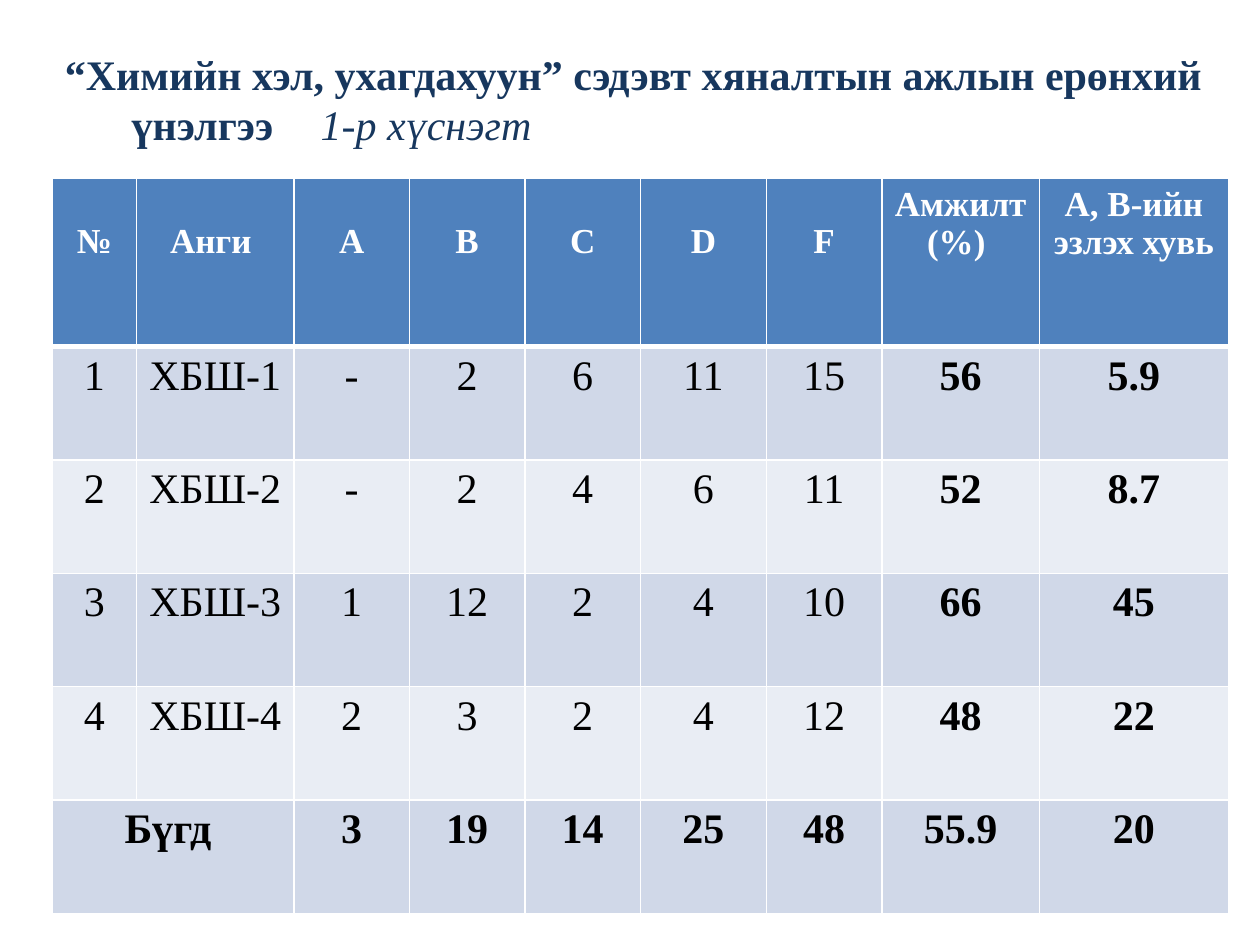
from dataclasses import dataclass

from lxml.etree import SubElement
from pptx import Presentation
from pptx.dml.color import RGBColor as Rgb
from pptx.enum.text import PP_ALIGN as Align
from pptx.oxml import parse_xml
from pptx.oxml.ns import nsdecls, qn
from pptx.util import Inches, Pt

# Content
TITLE = "“Химийн хэл, ухагдахуун” сэдэвт хяналтын ажлын ерөнхий үнэлгээ"
TABLE_LABEL = "1-р хүснэгт"
HEADERS = ["№", "Анги ", "А", "B", "C", "D", "F", "Амжилт (%) ", "А, В-ийн эзлэх хувь"]
CLASSES = [
    ["1", "ХБШ-1", "-", "2", "6", "11", "15", "56", "5.9"],
    ["2", "ХБШ-2", "-", "2", "4", "6", "11", "52", "8.7"],
    ["3", "ХБШ-3", "1", "12", "2", "4", "10", "66", "45"],
    ["4", "ХБШ-4", "2", "3", "2", "4", "12", "48", "22"],
]
TOTALS = ["Бүгд ", "", "3", "19", "14", "25", "48", "55.9", "20"]


@dataclass(frozen=True)
class Theme:
    font: str = "Times New Roman"
    title: str = "17375E"
    header: str = "4F81BD"
    bands: tuple = ("D0D8E8", "E9EDF4")
    light: str = "FFFFFF"
    dark: str = "000000"
    header_size: int = 20
    body_size: int = 24
    rule: int = 1
    heavy_rule: int = 3


THEME = Theme()

# Grid, in twelfths of an inch
UNIT = Inches(1) / 12
COLUMNS = [8, 15, 11, 11, 11, 12, 11, 15, 18]
HEADER_ROW, BODY_ROW = 16, 10.8
LEFT, TITLE_TOP, TITLE_HEIGHT, TABLE_TOP = 5, 4, 11, 17
BOLD_FROM = 7  # first of the two percentage columns
HANGING = Inches(0.53)
LABEL_TAB = Inches(6.92)


def units(count):
    return round(count * UNIT)


def add_span(para, text, size, color, bold=False, italic=False):
    span = para.add_run()
    span.text = text
    font = span.font
    font.name, font.size = THEME.font, Pt(size)
    font.bold, font.italic = bold, italic
    font.color.rgb = Rgb.from_string(color)


def set_borders(cell, **widths):
    props = cell._tc.get_or_add_tcPr()
    for index, side in enumerate("LRTB"):
        width = Pt(widths.get(side, THEME.rule))
        props.insert(index, parse_xml(
            f'<a:ln{side} {nsdecls("a")} w="{width}"><a:solidFill>'
            f'<a:srgbClr val="{THEME.light}"/></a:solidFill></a:ln{side}>'))


def fill_cell(cell, text, fill, size, color, bold):
    cell.fill.solid()
    cell.fill.fore_color.rgb = Rgb.from_string(fill)
    para = cell.text_frame.paragraphs[0]
    para.alignment = Align.CENTER
    if text:
        add_span(para, text, size, color, bold)


def add_title(page):
    box = page.shapes.add_textbox(units(LEFT), units(TITLE_TOP),
                                  units(sum(COLUMNS)), units(TITLE_HEIGHT))
    box.text_frame.word_wrap = True
    para = box.text_frame.paragraphs[0]
    para.space_before = Pt(0.2 * THEME.body_size)
    # Hanging indent, with a tab stop for the table label
    props = para._p.get_or_add_pPr()
    props.set("marL", str(HANGING))
    props.set("indent", str(-HANGING))
    stops = SubElement(props, qn("a:tabLst"))
    SubElement(stops, qn("a:tab"), pos=str(LABEL_TAB), algn="l")
    add_span(para, TITLE + "\t", THEME.body_size, THEME.title, bold=True)
    add_span(para, TABLE_LABEL, THEME.body_size, THEME.title, italic=True)


def add_grades(page):
    body = CLASSES + [TOTALS]
    heights = [HEADER_ROW] + [BODY_ROW] * len(body)
    table = page.shapes.add_table(
        len(heights), len(COLUMNS), units(LEFT), units(TABLE_TOP),
        units(sum(COLUMNS)), units(sum(heights))).table
    for column, width in zip(table.columns, COLUMNS):
        column.width = units(width)
    for row, height in zip(table.rows, heights):
        row.height = units(height)

    # Header: short names sit one line lower
    for col, text in enumerate(HEADERS):
        cell = table.cell(0, col)
        fill_cell(cell, text, THEME.header, THEME.header_size, THEME.light, True)
        set_borders(cell, B=THEME.heavy_rule)
        if col < BOLD_FROM:
            cell.margin_top = Inches(0.35)

    # Classes and totals
    for row, values in enumerate(body, 1):
        band = THEME.bands[(row - 1) % 2]
        for col, text in enumerate(values):
            cell = table.cell(row, col)
            bold = values is TOTALS or col >= BOLD_FROM
            fill_cell(cell, text, band, THEME.body_size, THEME.dark, bold)
            set_borders(cell, T=THEME.heavy_rule if row == 1 else THEME.rule)
    last = len(body)
    table.cell(last, 0).merge(table.cell(last, 1))


def main():
    deck = Presentation()
    deck.slide_width, deck.slide_height = Inches(10), Inches(7.5)
    page = deck.slides.add_slide(deck.slide_layouts[6])
    add_grades(page)
    add_title(page)
    deck.save("out.pptx")


if __name__ == "__main__":
    main()
